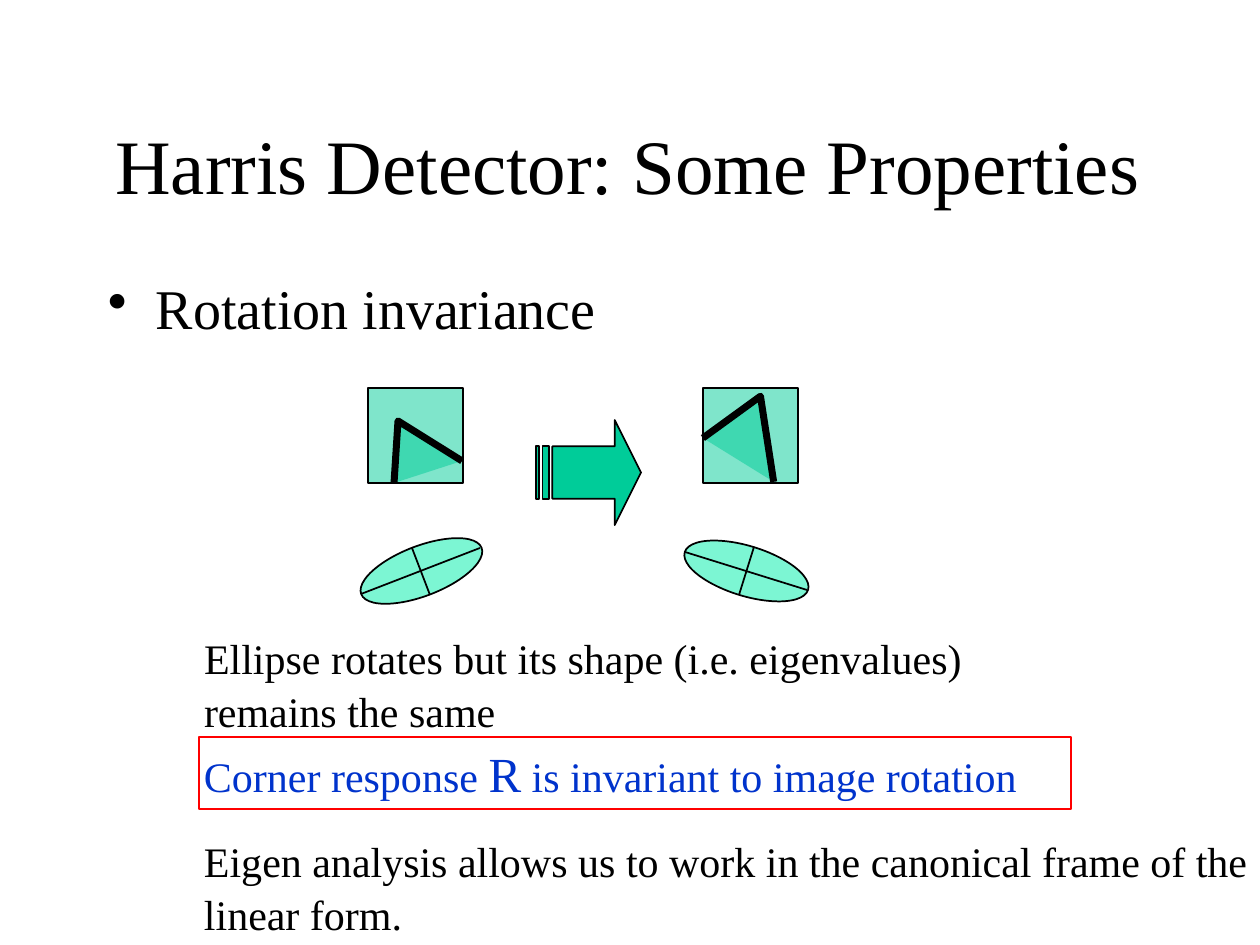
from dataclasses import dataclass

from lxml import etree
from pptx import Presentation
from pptx.dml.color import RGBColor
from pptx.enum.shapes import MSO_CONNECTOR, MSO_SHAPE
from pptx.enum.text import MSO_ANCHOR, PP_ALIGN
from pptx.oxml.ns import qn
from pptx.util import Pt

RECTANGLE, OVAL = MSO_SHAPE.RECTANGLE, MSO_SHAPE.OVAL
STRIPED_ARROW = MSO_SHAPE.STRIPED_RIGHT_ARROW
STRAIGHT = MSO_CONNECTOR.STRAIGHT
TOP, MIDDLE = MSO_ANCHOR.TOP, MSO_ANCHOR.MIDDLE
LEFT, CENTER = PP_ALIGN.LEFT, PP_ALIGN.CENTER
PX = 914400 / 126


@dataclass(frozen=True)
class Theme:
    font: str = "Times New Roman"
    black: RGBColor = RGBColor(0x00, 0x00, 0x00)
    green: RGBColor = RGBColor(0x00, 0xCC, 0x99)
    mint: RGBColor = RGBColor(0x7C, 0xF6, 0xD3)
    red: RGBColor = RGBColor(0xFF, 0x00, 0x00)
    blue: RGBColor = RGBColor(0x00, 0x33, 0xCC)
    title: int = 44
    bullet: int = 32
    symbol: int = 28
    body: int = 24


def paint(shape, fill, line=Theme.black, width=1, alpha=None):
    """Set fill, outline and optional opacity (percent), without a shadow."""
    shape.shadow.inherit = False
    if fill is None:
        shape.fill.background()
    else:
        shape.fill.solid()
        shape.fill.fore_color.rgb = fill
    if alpha is not None:
        color = shape.fill._xPr.find(qn("a:solidFill"))[0]
        etree.SubElement(color, qn("a:alpha")).set("val", str(alpha * 1000))
    shape.line.color.rgb = line
    shape.line.width = Pt(width)


def write(shape, runs, color, align=LEFT, anchor=TOP, insets=(5, 0, 5, 0)):
    """Fill the first paragraph with (text, size) runs and return it."""
    frame = shape.text_frame
    frame.word_wrap = True
    frame.vertical_anchor = anchor
    frame.margin_left, frame.margin_top, frame.margin_right, frame.margin_bottom = (
        round(inset * PX) for inset in insets)
    paragraph = frame.paragraphs[0]
    paragraph.alignment = align
    for text, size in runs:
        run = paragraph.add_run()
        run.text = text
        run.font.name = theme.font
        run.font.size = Pt(size)
        run.font.color.rgb = color
    return paragraph


theme = Theme()
presentation = Presentation()
presentation.slide_width = round(1260 * PX)
presentation.slide_height = round(945 * PX)
slide = presentation.slides.add_slide(presentation.slide_layouts[6])
shapes = slide.shapes

# Title and bullet
title = shapes.add_textbox(*(round(v * PX) for v in (95, 53, 1071, 221)))
write(title, [("Harris Detector: Some Properties", theme.title)], theme.black,
      CENTER, MIDDLE, (13, 8, 18, 8))

bullet_box = shapes.add_textbox(*(round(v * PX) for v in (95, 273, 1071, 310)))
bullet = write(bullet_box, [("Rotation invariance", theme.bullet)], theme.black,
               insets=(8, 8, 18, 8))
bullet.line_spacing = 0.9
properties = bullet._p.get_or_add_pPr()
properties.set("marL", str(round(53 * PX)))
properties.set("indent", str(round(-48 * PX)))
etree.SubElement(properties, qn("a:buChar")).set("char", "•")

# Image patches: the same corner before and after rotation
PATCH_TOP, PATCH_SIZE = 388, 95
for patch_left, corner_left, corner_top, width, height, angle in (
        (368, 394, 421, 68, 62, 0), (703, 716, 410, 79, 71, 50)):
    patch = shapes.add_shape(RECTANGLE, *(
        round(v * PX) for v in (patch_left, PATCH_TOP, PATCH_SIZE, PATCH_SIZE)))
    paint(patch, theme.green, alpha=50)
    builder = shapes.build_freeform(corner_left, corner_top + height, scale=PX)
    builder.add_line_segments([
        (corner_left + round(width * 0.06), corner_top),
        (corner_left + width, corner_top + round(height * 0.64))], close=False)
    corner = builder.convert_to_shape()
    corner.rotation = angle
    paint(corner, theme.green, width=4, alpha=50)

arrow = shapes.add_shape(STRIPED_ARROW, *(round(v * PX) for v in (536, 420, 105, 105)))
arrow.adjustments[0], arrow.adjustments[1] = 0.5, 0.25
paint(arrow, theme.green)

# Ellipses with their principal axes
for ellipse_left, angle, axes in (
        (357, 339, ((361, 594, 480, 548), (412, 548, 430, 595))),
        (682, 17, ((685, 552, 807, 590), (754, 547, 739, 595)))):
    ellipse = shapes.add_shape(OVAL, *(round(v * PX) for v in (ellipse_left, 546, 129, 50)))
    ellipse.rotation = angle
    paint(ellipse, theme.mint)
    for ends in axes:
        axis = shapes.add_connector(STRAIGHT, *(round(v * PX) for v in ends))
        axis.line.color.rgb = theme.black
        axis.line.width = Pt(1)
        etree.SubElement(axis._element.spPr, qn("a:effectLst"))

# Conclusions
for top, width, text in (
        (630, 788, "Ellipse rotates but its shape (i.e. eigenvalues) remains the same"),
        (833, 1061, "Eigen analysis allows us to work in the canonical frame of the linear form.")):
    note = shapes.add_textbox(*(round(v * PX) for v in (199, top, width, 107)))
    write(note, [(text, theme.body)], theme.black).line_spacing = 1.05

result = shapes.add_shape(RECTANGLE, *(round(v * PX) for v in (199, 737, 872, 72)))
paint(result, None, theme.red)
write(result, [("Corner response ", theme.body), ("R", theme.symbol),
               (" is invariant to image rotation", theme.body)], theme.blue, anchor=MIDDLE)

presentation.save("out.pptx")
